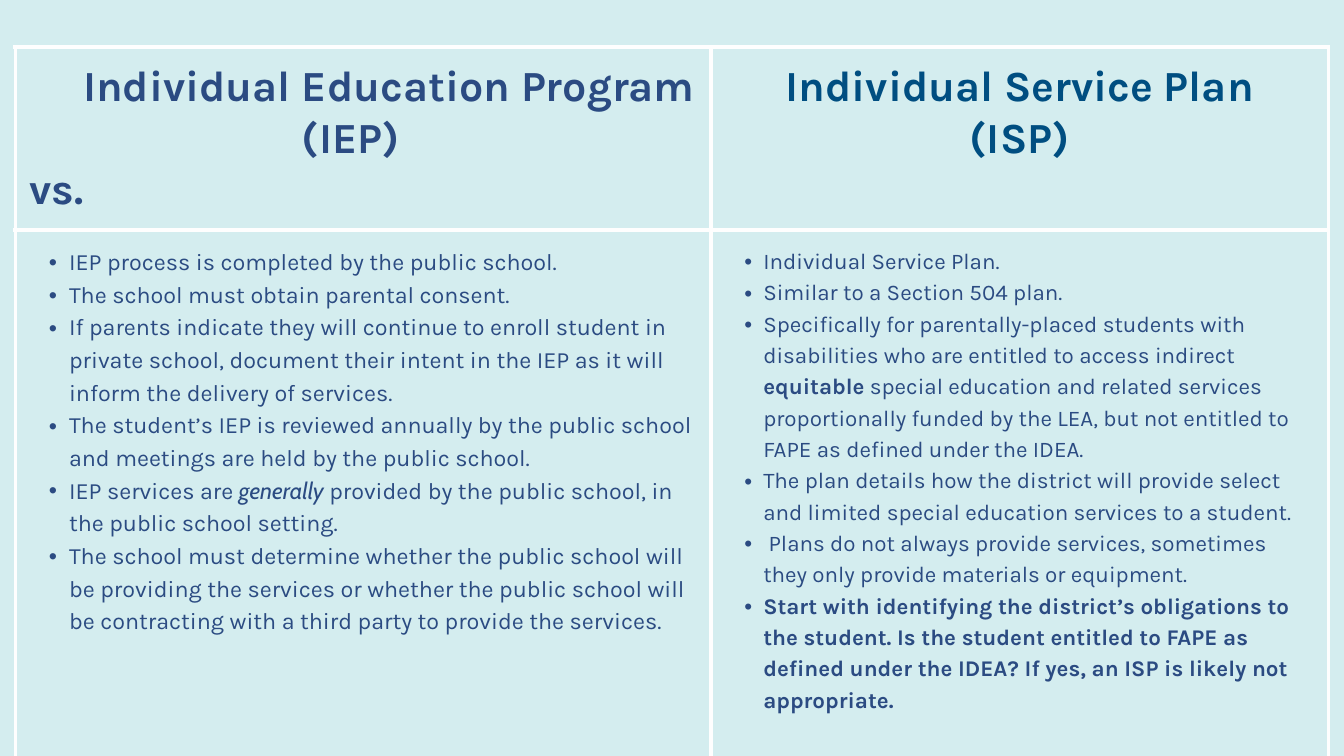
from dataclasses import dataclass

from lxml.etree import SubElement
from pptx import Presentation
from pptx.dml.color import RGBColor as RGB
from pptx.enum.text import PP_ALIGN as Align
from pptx.oxml.ns import qn
from pptx.util import Cm, Pt


@dataclass(frozen=True)
class Theme:
    background: RGB = RGB.from_string("D4EDEF")
    navy: RGB = RGB.from_string("2B4B82")
    blue: RGB = RGB.from_string("004E81")
    border: str = "FEFEFE"
    border_width: float = 4.5
    font: str = "Karla"
    accent_font: str = "Cabin"
    title_size: float = 46
    title_leading: float = 55.2
    iep_size: float = 25
    isp_size: float = 24
    leading_ratio: float = 1.4


THEME = Theme()

# Each bullet is a list of (text, style) runs.
IEP_POINTS = [
    [("IEP process is completed by the public school.", "")],
    [("The school must obtain parental consent.", "")],
    [("If parents indicate they will continue to enroll student in private school, "
      "document their intent in the IEP as it will inform the delivery of services.", "")],
    [("The student’s IEP is reviewed annually by the public school and meetings are "
      "held by the public school.", "")],
    [("IEP services are ", ""), ("generally", "accent"),
     (" provided by the public school, in the public school setting.", "")],
    [("The school must determine whether the public school will be providing the "
      "services or whether the public school will be contracting with a third party "
      "to provide the services.", "")],
]
ISP_POINTS = [
    [("Individual Service Plan.", "")],
    [("Similar to a Section 504 plan.", "")],
    [("Specifically for parentally-placed students with disabilities who are entitled "
      "to access indirect ", ""), ("equitable", "bold"),
     (" special education and related services proportionally funded by the LEA, but "
      "not entitled to FAPE as defined under the IDEA.", "")],
    [("The plan details how the district will provide select and limited special "
      "education services to a student.", "")],
    [(" Plans do not always provide services, sometimes they only provide materials "
      "or equipment.", "")],
    [("Start with identifying the district’s obligations to the student. Is the student "
      "entitled to FAPE as defined under the IDEA? If yes, an ISP is likely not "
      "appropriate.", "bold")],
]


def add_run(p, text, size, color, style=""):
    r = p.add_run()
    r.text = text
    r.font.name = THEME.accent_font if style == "accent" else THEME.font
    r.font.size = Pt(size)
    r.font.color.rgb = color
    r.font.bold = style == "bold"
    r.font.italic = style == "accent"


def add_paragraphs(tf, count):
    return [tf.paragraphs[0]] + [tf.add_paragraph() for _ in range(count - 1)]


def style_cell(cell):
    """Give the cell its margins, white borders and fill."""
    cell.margin_left = cell.margin_right = Cm(0.53)
    cell.margin_top = cell.margin_bottom = Cm(0.53)
    tcPr = cell._tc.get_or_add_tcPr()
    for side in "LRTB":
        line = SubElement(tcPr, qn(f"a:ln{side}"), w=str(Pt(THEME.border_width)))
        fill = SubElement(line, qn("a:solidFill"))
        SubElement(fill, qn("a:srgbClr"), val=THEME.border)
    cell.fill.solid()
    cell.fill.fore_color.rgb = THEME.background


def fill_title(cell, lines, color, align=Align.LEFT):
    """Write (text, left indent in cm) lines as a heading."""
    for p, (text, indent) in zip(add_paragraphs(cell.text_frame, len(lines)), lines):
        p.alignment = align
        p.line_spacing = Pt(THEME.title_leading)
        p._p.get_or_add_pPr().set("marL", str(Cm(indent)))
        add_run(p, text, THEME.title_size, color, "bold")


def fill_bullets(cell, points, size, indent, hanging):
    for p, runs in zip(add_paragraphs(cell.text_frame, len(points)), points):
        p.level = 1
        p.line_spacing = Pt(size * THEME.leading_ratio)
        pPr = p._p.get_or_add_pPr()
        pPr.set("marL", str(Cm(indent)))
        pPr.set("indent", str(-Cm(hanging)))
        SubElement(pPr, qn("a:buFont"), typeface="Arial")
        SubElement(pPr, qn("a:buChar"), char="•")
        for text, style in runs:
            add_run(p, text, size, THEME.navy, style)


def add_comparison(s, left, top, col_widths, row_heights):
    table = s.shapes.add_table(2, 2, Cm(left), Cm(top), Cm(sum(col_widths)),
                               Cm(sum(row_heights))).table
    table.first_row = table.horz_banding = False
    for column, width in zip(table.columns, col_widths):
        column.width = Cm(width)
    for row, height in zip(table.rows, row_heights):
        row.height = Cm(height)
    for cell in table.iter_cells():
        style_cell(cell)

    fill_title(table.cell(0, 0), [("Individual Education Program", 2.03),
                                  ("(IEP)", 10.3), ("vs.", 0)], THEME.navy)
    fill_title(table.cell(0, 1), [("Individual Service Plan", 0), ("(ISP)", 0)],
               THEME.blue, Align.CENTER)
    fill_bullets(table.cell(1, 0), IEP_POINTS, THEME.iep_size, 1.5, 0.76)
    fill_bullets(table.cell(1, 1), ISP_POINTS, THEME.isp_size, 1.45, 0.71)


def main():
    prs = Presentation()
    prs.slide_width, prs.slide_height = Cm(50.8), Cm(28.58)
    s = prs.slides.add_slide(prs.slide_layouts[6])
    s.background.fill.solid()
    s.background.fill.fore_color.rgb = THEME.background
    add_comparison(s, 0.58, 1.78, (26.29, 23.34), (5.74, 20.12))
    prs.save("out.pptx")


if __name__ == "__main__":
    main()
